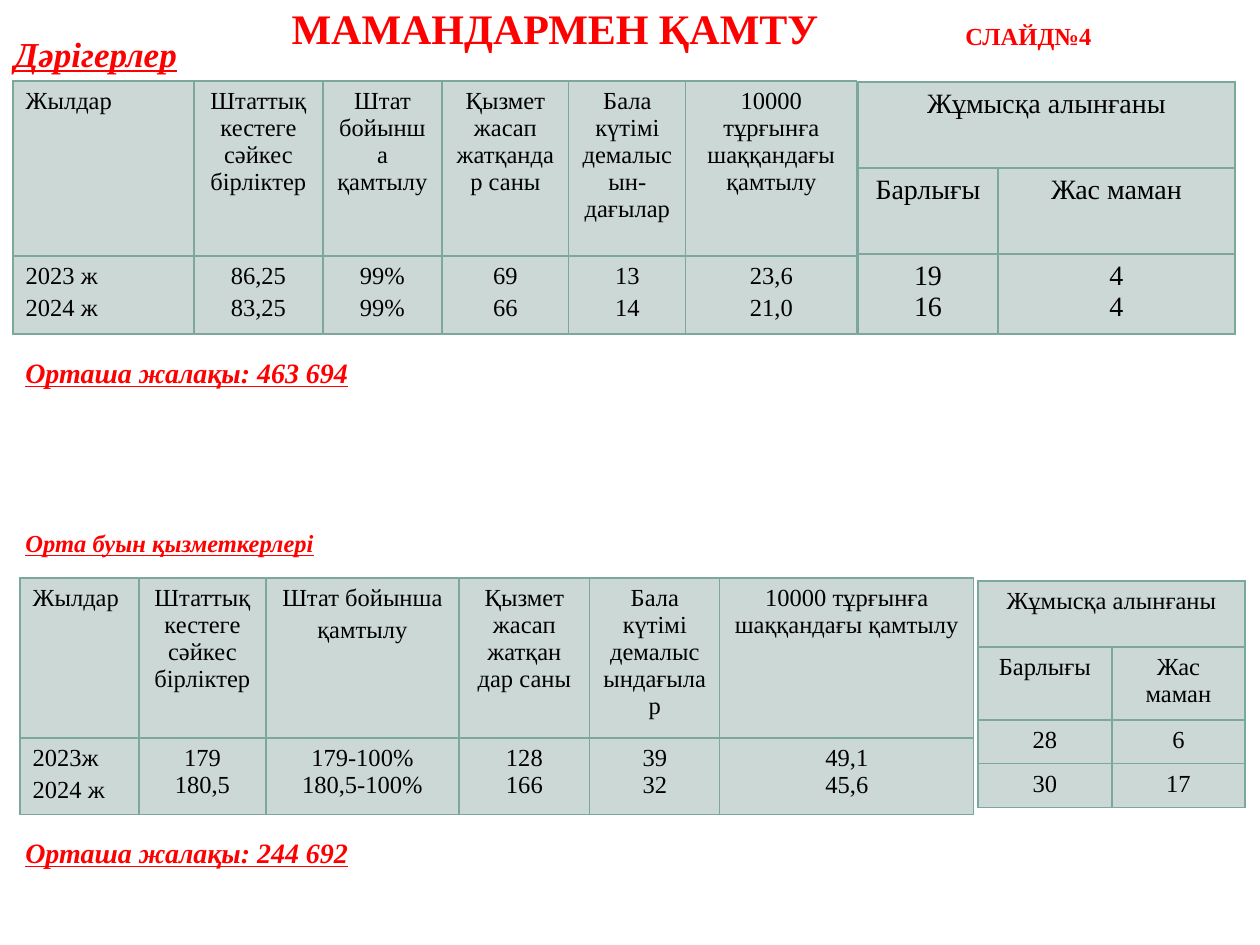
from lxml import etree
from pptx import Presentation
from pptx import util as u
from pptx.dml.color import RGBColor
from pptx.enum import text
from pptx.oxml.ns import qn

PX = 914400 // 126
FONT = "Times New Roman"
COLORS = {"accent": "FF0000", "ink": "000000", "cell": "CCD8D5", "border": "7BA79D"}
HEADING = {"bold": True, "italic": True, "underline": True}
ALIGN = text.PP_ALIGN


def px(value):
    return u.Emu(value * PX)


def place(shape, box):
    for name, value in zip(("left", "top", "width", "height"), box):
        setattr(shape, name, px(value))


def format_paragraph(paragraph, size, color, align=ALIGN.LEFT, space=0, **styles):
    paragraph.alignment = align
    paragraph.space_before = u.Pt(space)
    values = {"name": FONT, "size": u.Pt(size), **styles}
    for run in paragraph.runs:
        for name, value in values.items():
            setattr(run.font, name, value)
        run.font.color.rgb = RGBColor.from_string(COLORS[color])


def add_title(slide, box, wording, size):
    title = slide.shapes.title
    place(title, box)
    frame = title.text_frame
    frame.text = wording
    frame.vertical_anchor = text.MSO_ANCHOR.TOP
    frame.auto_size = text.MSO_AUTO_SIZE.NONE
    format_paragraph(frame.paragraphs[0], size, "accent", ALIGN.CENTER, bold=True)


def add_label(slide, box, wording, size, **styles):
    label = slide.shapes.add_textbox(*map(px, box))
    frame = label.text_frame
    frame.text = wording
    frame.word_wrap = False
    format_paragraph(frame.paragraphs[0], size, "accent", **styles)


def add_borders(cell):
    properties = cell._tc.get_or_add_tcPr()
    for index, side in enumerate(("lnL", "lnR", "lnT", "lnB")):
        line = etree.Element(qn(f"a:{side}"), w=str(u.Pt(0.79)))
        fill = etree.SubElement(line, qn("a:solidFill"))
        etree.SubElement(fill, qn("a:srgbClr"), val=COLORS["border"])
        properties.insert(index, line)


def add_grid(slide, corner, widths, heights, rows, size, spaced_rows, years=False):
    """Years: the first column is left-aligned. Otherwise the top row is merged."""
    box = (*corner, sum(widths), sum(heights))
    table = slide.shapes.add_table(len(rows), len(widths), *map(px, box)).table
    table.first_row = table.horz_banding = False
    for column, width in zip(table.columns, widths):
        column.width = px(width)
    for row, height in zip(table.rows, heights):
        row.height = px(height)
    if not years:
        table.cell(0, 0).merge(table.cell(0, len(widths) - 1))

    for row_index, row in enumerate(rows):
        for column_index, wording in enumerate(row):
            cell = table.cell(row_index, column_index)
            cell.fill.solid()
            cell.fill.fore_color.rgb = RGBColor.from_string(COLORS["cell"])
            add_borders(cell)
            if not wording:
                continue
            cell.text_frame.text = wording
            is_year = years and column_index == 0
            align = ALIGN.LEFT if is_year else ALIGN.CENTER
            space = size * 0.2 if is_year or row_index < spaced_rows else 0
            for paragraph in cell.text_frame.paragraphs:
                format_paragraph(paragraph, size, "ink", align, space)


def add_doctors(slide, left, top):
    add_label(slide, (left - 11, top - 55, 627, 55), "Дәрігерлер", 20, **HEADING)
    add_grid(slide, (left, top), (181, 129, 119, 127, 117, 171), (175, 78), [
        ["Жылдар", "Штаттық кестеге сәйкес бірліктер", "Штат бойынша қамтылу",
         "Қызмет жасап жатқандар саны", "Бала күтімі демалысын-дағылар",
         "10000 тұрғынға шаққандағы қамтылу"],
        ["2023 ж\n2024 ж", "86,25\n83,25", "99%\n99%", "69\n66", "13\n14", "23,6\n21,0"],
    ], 14, spaced_rows=2, years=True)
    add_grid(slide, (left + 845, top + 1), (140, 237), (86, 86, 80), [
        ["Жұмысқа алынғаны", ""],
        ["Барлығы", "Жас маман"],
        ["19\n16", "4\n4"],
    ], 16, spaced_rows=2)
    add_label(slide, (left, top + 268, 353, 47), "Орташа жалақы: 463 694", 16, **HEADING)


def add_nurses(slide, left, top):
    add_label(slide, (left - 7, top - 56, 316, 43), "Орта буын қызметкерлері", 14, **HEADING)
    add_grid(slide, (left, top), (119, 127, 193, 131, 130, 254), (160, 76), [
        ["Жылдар", "Штаттық кестеге сәйкес бірліктер", "Штат бойынша\nқамтылу",
         "Қызмет жасап жатқан дар саны", "Бала күтімі демалысындағылар",
         "10000 тұрғынға шаққандағы қамтылу"],
        ["2023ж\n2024 ж", "179\n180,5", "179-100%\n180,5-100%", "128\n166", "39\n32",
         "49,1\n45,6"],
    ], 14, spaced_rows=1, years=True)
    add_grid(slide, (left + 958, top + 3), (134, 133), (66, 73, 44, 44), [
        ["Жұмысқа алынғаны", ""],
        ["Барлығы", "Жас маман"],
        ["28", "6"],
        ["30", "17"],
    ], 14, spaced_rows=2)
    add_label(slide, (left - 7, top + 251, 353, 47), "Орташа жалақы: 244 692", 16, **HEADING)


def main():
    presentation = Presentation()
    presentation.slide_width, presentation.slide_height = px(1260), px(945)
    slide = presentation.slides.add_slide(presentation.slide_layouts[5])

    # Title and slide number
    add_title(slide, (255, -4, 600, 63), "МАМАНДАРМЕН ҚАМТУ", 24)
    add_label(slide, (953, 15, 151, 43), "СЛАЙД№4", 14, bold=True)

    # Staff groups
    add_doctors(slide, 13, 81)
    add_nurses(slide, 20, 578)

    presentation.save("out.pptx")


if __name__ == "__main__":
    main()
